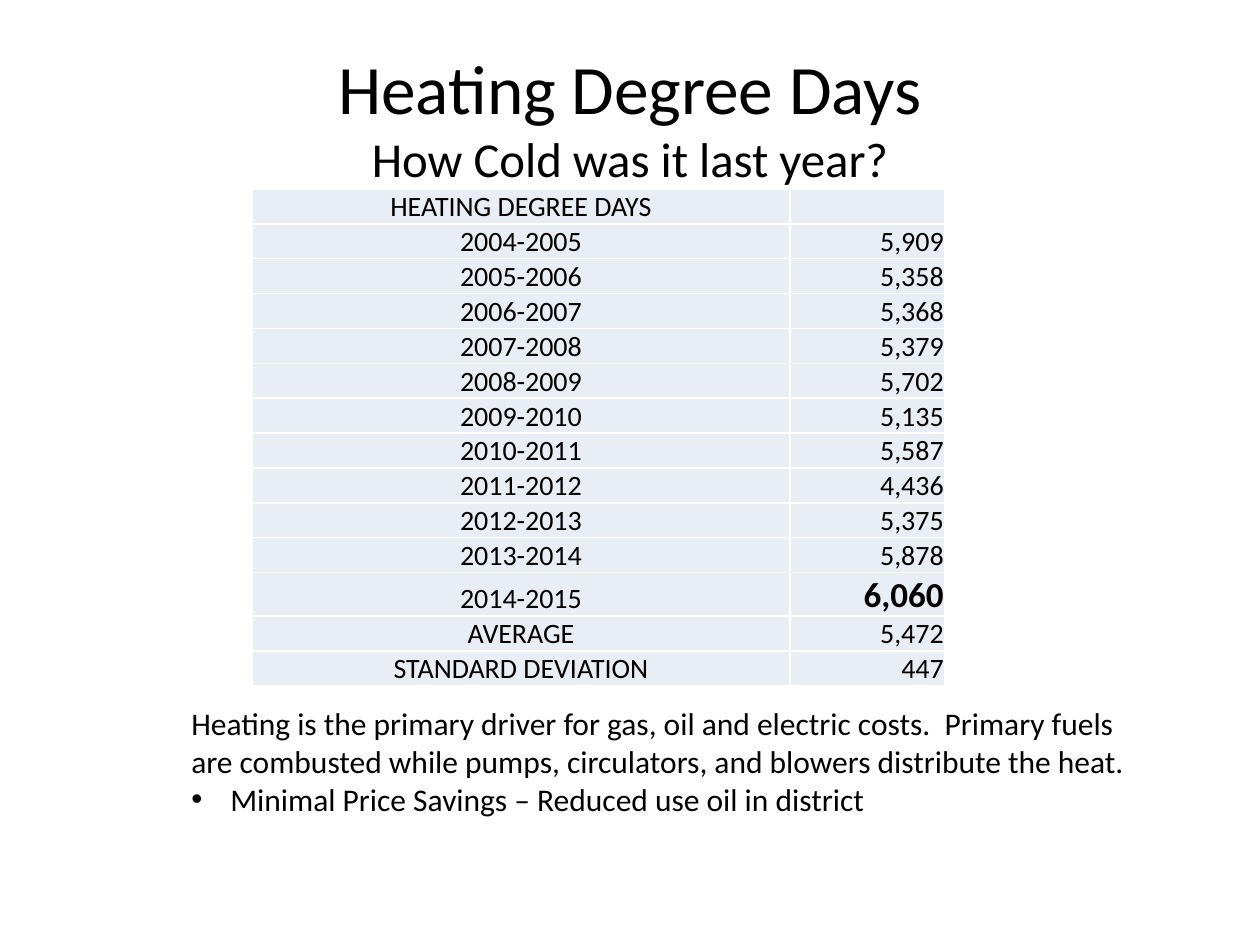
from lxml.etree import SubElement
from pptx import Presentation
from pptx.dml.color import RGBColor
from pptx.enum.text import MSO_ANCHOR, MSO_AUTO_SIZE, PP_ALIGN
from pptx.oxml.ns import qn
from pptx.util import Inches, Pt

BLACK = RGBColor(0x00, 0x00, 0x00)
PALE_BLUE = RGBColor(0xE9, 0xED, 0xF4)
FONT = "Calibri"

ROWS = [
    ("HEATING DEGREE DAYS", ""),
    ("2004-2005", "5,909"),
    ("2005-2006", "5,358"),
    ("2006-2007", "5,368"),
    ("2007-2008", "5,379"),
    ("2008-2009", "5,702"),
    ("2009-2010", "5,135"),
    ("2010-2011", "5,587"),
    ("2011-2012", "4,436"),
    ("2012-2013", "5,375"),
    ("2013-2014", "5,878"),
    ("2014-2015", "6,060"),
    ("AVERAGE", "5,472"),
    ("STANDARD DEVIATION", "447"),
]
COLDEST = "6,060"


def add_run(p, text, size, bold=False):
    r = p.add_run()
    r.text = text
    r.font.name = FONT
    r.font.size = Pt(size)
    r.font.bold = bold
    r.font.color.rgb = BLACK


prs = Presentation()
prs.slide_width, prs.slide_height = Inches(10), Inches(7.5)
s = prs.slides.add_slide(prs.slide_layouts[5])

# Title
title = s.shapes.title
title.left, title.top = Inches(0.5), Inches(0.3)
title.width, title.height = Inches(9), Inches(1.25)
tf = title.text_frame
tf.auto_size = MSO_AUTO_SIZE.NONE
tf.vertical_anchor = MSO_ANCHOR.MIDDLE
p = tf.paragraphs[0]
p.alignment = PP_ALIGN.CENTER
add_run(p, "Heating Degree Days", 39.6)
p.add_line_break()
add_run(p, "How Cold was it last year?", 27.9)

# Comments
box = s.shapes.add_textbox(Inches(1.42), Inches(5.54), Inches(7.67), Inches(1.01))
tf = box.text_frame
tf.word_wrap = True
tf.auto_size = MSO_AUTO_SIZE.SHAPE_TO_FIT_TEXT
add_run(tf.paragraphs[0],
        "Heating is the primary driver for gas, oil and electric costs.  Primary fuels "
        "are combusted while pumps, circulators, and blowers distribute the heat.", 18)
p = tf.add_paragraph()
add_run(p, "Minimal Price Savings – Reduced use oil in district", 18)
pPr = p._p.get_or_add_pPr()
pPr.set("marL", str(Inches(0.31)))
pPr.set("indent", str(-Inches(0.31)))
SubElement(pPr, qn("a:buFont"), typeface="Arial")
SubElement(pPr, qn("a:buChar"), char="•")

# Degree days by heating season
frame = s.shapes.add_table(len(ROWS), 2, Inches(2), Inches(1.5), Inches(5.5), Inches(3.95))
table = frame.table
table.first_row = False
table.horz_banding = False
table.columns[0].width = Inches(4.27)
table.columns[1].width = Inches(1.23)
for i, values in enumerate(ROWS):
    table.rows[i].height = Inches(0.21)
    for j, text in enumerate(values):
        cell = table.cell(i, j)
        cell.fill.solid()
        cell.fill.fore_color.rgb = PALE_BLUE
        cell.vertical_anchor = MSO_ANCHOR.BOTTOM
        cell.margin_left = cell.margin_right = cell.margin_top = Inches(0.01)
        cell.margin_bottom = 0
        p = cell.text_frame.paragraphs[0]
        p.alignment = PP_ALIGN.RIGHT if j else PP_ALIGN.CENTER
        if text:
            coldest = text == COLDEST
            add_run(p, text, 20 if coldest else 16, coldest)
        else:
            SubElement(p._p, qn("a:endParaRPr"), sz="1600")
frame.height = Inches(3.95)

prs.save("out.pptx")
